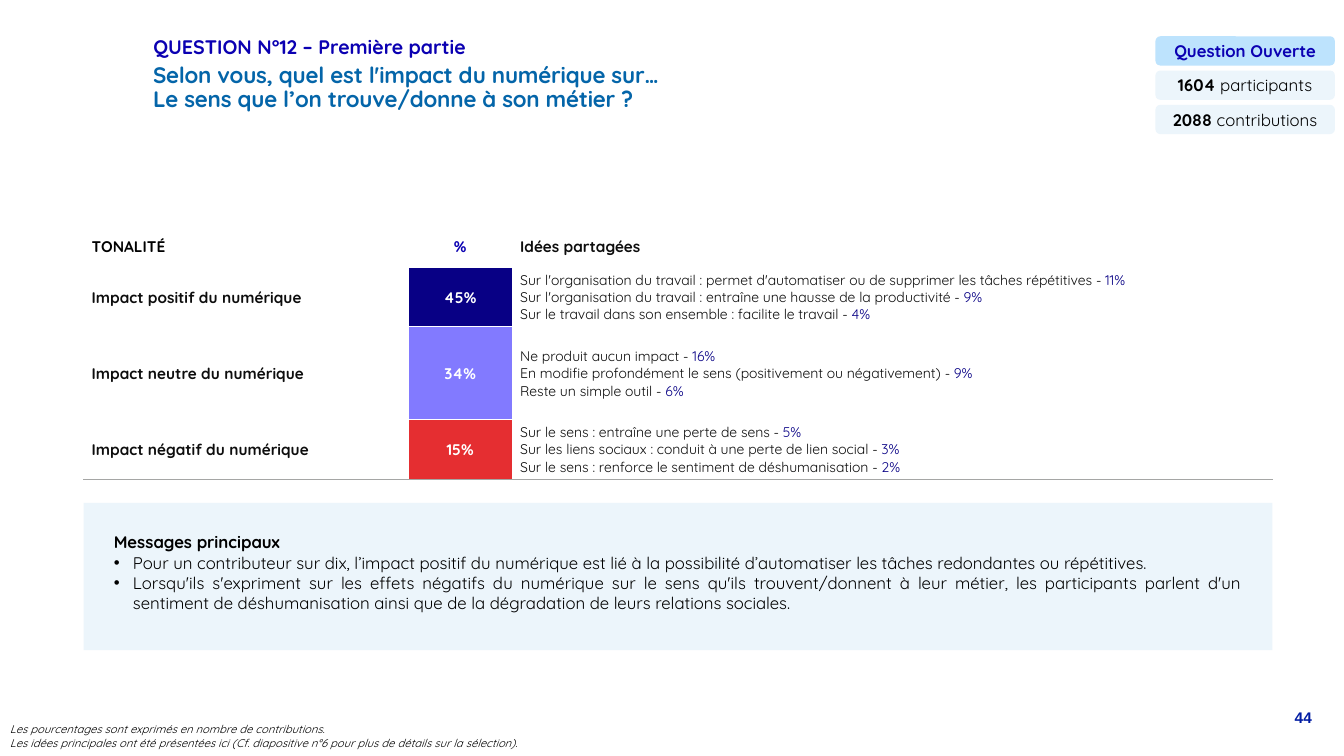
from dataclasses import dataclass

from lxml import etree
from pptx import Presentation
from pptx import util as u
from pptx.dml.color import RGBColor
from pptx.enum import shapes, text
from pptx.oxml import ns

# Content
QUESTION = "QUESTION N°12 – Première partie"
SUBJECT = ["Selon vous, quel est l'impact du numérique sur…",
           "Le sens que l’on trouve/donne à son métier ?"]
BADGES = [("Question Ouverte", ""), ("1604 ", "participants"),
          ("2088 ", "contributions")]
HEADINGS = ["TONALITÉ", "%", "Idées partagées"]
TONES = [
    ("Impact positif du numérique", "45%", "080085", [
        ("Sur l'organisation du travail : permet d'automatiser ou de supprimer "
         "les tâches répétitives", "11%"),
        ("Sur l'organisation du travail : entraîne une hausse de la productivité", "9%"),
        ("Sur le travail dans son ensemble : facilite le travail", "4%")]),
    ("Impact neutre du numérique", "34%", "827AFF", [
        ("Ne produit aucun impact", "16%"),
        ("En modifie profondément le sens (positivement ou négativement)", "9%"),
        ("Reste un simple outil", "6%")]),
    ("Impact négatif du numérique", "15%", "E52E31", [
        ("Sur le sens : entraîne une perte de sens", "5%"),
        ("Sur les liens sociaux : conduit à une perte de lien social", "3%"),
        ("Sur le sens : renforce le sentiment de déshumanisation", "2%")]),
]
MESSAGES_HEADING = "Messages principaux"
MESSAGES = [
    "Pour un contributeur sur dix, l’impact positif du numérique est lié à la "
    "possibilité d’automatiser les tâches redondantes ou répétitives.",
    "Lorsqu'ils s'expriment sur les effets négatifs du numérique sur le sens qu'ils "
    "trouvent/donnent à leur métier, les participants parlent d'un sentiment de "
    "déshumanisation ainsi que de la dégradation de leurs relations sociales.",
]
NOTES = ["Les pourcentages sont exprimés en nombre de contributions.",
         "Les idées principales ont été présentées ici (Cf. diapositive n°6 pour plus "
         "de détails sur la sélection)."]
PAGE = "44"


@dataclass(frozen=True)
class Theme:
    font: str = "Quicksand"
    page_font: str = "Arial"
    black: str = "000000"
    ink: str = "0D0D0D"
    white: str = "FFFFFF"
    accent: str = "0B00B2"
    share: str = "080085"
    subject: str = "0465A9"
    page: str = "011CA3"
    pale: str = "ECF5FB"
    sky: str = "BDE3FD"
    rule: str = "A5A6A5"
    title_size: int = 14
    subject_size: int = 16
    body_size: int = 12
    table_size: int = 11
    idea_size: int = 10
    note_size: int = 8


T = Theme()
ALIGN = text.PP_ALIGN
MIDDLE = text.MSO_ANCHOR.MIDDLE


def box(left, top, width, height):
    return [u.Inches(value) for value in (left, top, width, height)]


def style(run, size, color, bold=False, italic=False, font=T.font):
    run.font.name, run.font.size = font, u.Pt(size)
    run.font.bold, run.font.italic = bold, italic
    run.font.color.rgb = RGBColor.from_string(color)


def write(paragraph, words, size, color, align=ALIGN.LEFT, **look):
    paragraph.text = words
    paragraph.alignment = align
    style(paragraph.runs[0], size, color, **look)


def add_words(paragraph, words, size, color, **look):
    run = paragraph.add_run()
    run.text = words
    style(run, size, color, **look)


def paragraphs(frame, count):
    return [frame.paragraphs[0]] + [frame.add_paragraph() for _ in range(count - 1)]


def add_text(slide, *place):
    frame = slide.shapes.add_textbox(*box(*place)).text_frame
    frame.word_wrap = True
    return frame


def add_panel(slide, kind, color, *place):
    panel = slide.shapes.add_shape(kind, *box(*place))
    panel.shadow.inherit = False
    panel.fill.solid()
    panel.fill.fore_color.rgb = RGBColor.from_string(color)
    panel.line.fill.background()
    return panel


def add_bullet(paragraph, indent):
    props = paragraph._p.get_or_add_pPr()
    props.set("marL", str(u.Inches(indent)))
    props.set("indent", str(-u.Inches(indent)))
    etree.SubElement(props, ns.qn("a:buFont"), typeface=T.page_font)
    etree.SubElement(props, ns.qn("a:buChar"), char="•")


def format_cell(cell, sides, color=None):
    cell.vertical_anchor = MIDDLE
    cell.margin_left = cell.margin_right = u.Inches(0.08)
    cell.margin_top, cell.margin_bottom = u.Inches(0.01), 0
    props = cell._tc.get_or_add_tcPr()
    for side in sides:
        line = etree.SubElement(props, ns.qn(f"a:ln{side}"), w=str(u.Pt(0.25)))
        fill = etree.SubElement(line, ns.qn("a:solidFill"))
        etree.SubElement(fill, ns.qn("a:srgbClr"), val=T.rule)
    if color:
        cell.fill.solid()
        cell.fill.fore_color.rgb = RGBColor.from_string(color)
    else:
        cell.fill.background()


def add_heading(slide):
    title = slide.shapes.title
    title.left, title.top, title.width, title.height = box(1.42, 0.34, 9.9, 0.27)
    title.text_frame.vertical_anchor = MIDDLE
    question = title.text_frame.paragraphs[0]
    write(question, QUESTION, T.title_size, T.accent, bold=True)
    question.line_spacing = 0.9

    subject = add_text(slide, 1.42, 0.68, 9.9, 0.4)
    subject.vertical_anchor = MIDDLE
    for line, words in zip(paragraphs(subject, len(SUBJECT)), SUBJECT):
        write(line, words, T.subject_size, T.subject, bold=True)
        line.line_spacing = 0.9
        line.runs[0]._r.get_or_add_rPr().set("spc", "-10")


def add_badges(slide):
    for i, (strong, light) in enumerate(BADGES):
        badge = add_panel(slide, shapes.MSO_SHAPE.ROUNDED_RECTANGLE,
                          T.pale if light else T.sky, 11.46, 0.36 + 0.34 * i, 1.78, 0.29)
        badge.text_frame.vertical_anchor = MIDDLE
        label = badge.text_frame.paragraphs[0]
        write(label, strong, T.body_size, T.black if light else T.accent,
              ALIGN.CENTER, bold=True)
        if light:
            add_words(label, light, T.body_size, T.black)


def add_tones(slide):
    widths, heights = [3.22, 1.03, 7.54], [0.42, 0.59, 0.92, 0.59]
    tones = slide.shapes.add_table(len(heights), len(widths),
                                   *box(0.83, 2.23, sum(widths), sum(heights))).table
    tones.first_row = tones.horz_banding = False
    for column, width in zip(tones.columns, widths):
        column.width = u.Inches(width)
    for row, height in zip(tones.rows, heights):
        row.height = u.Inches(height)

    fills = [None] + [tone[2] for tone in TONES]
    for r, fill in enumerate(fills):
        for c in range(len(widths)):
            format_cell(tones.cell(r, c), "RB" if c < 2 else "B", fill if c == 1 else None)

    looks = [(T.black, ALIGN.LEFT), (T.accent, ALIGN.CENTER), (T.ink, ALIGN.LEFT)]
    for c, (words, (color, align)) in enumerate(zip(HEADINGS, looks)):
        write(tones.cell(0, c).text_frame.paragraphs[0], words, T.table_size, color,
              align, bold=True)
    for r, (tone, share, _, ideas) in enumerate(TONES, start=1):
        write(tones.cell(r, 0).text_frame.paragraphs[0], tone, T.table_size, T.ink, bold=True)
        write(tones.cell(r, 1).text_frame.paragraphs[0], share, T.table_size, T.white,
              ALIGN.CENTER, bold=True)
        lines = paragraphs(tones.cell(r, 2).text_frame, len(ideas))
        for line, (idea, part) in zip(lines, ideas):
            write(line, f"{idea} - ", T.idea_size, T.ink)
            add_words(line, part, T.idea_size, T.share)


def add_messages(slide):
    add_panel(slide, shapes.MSO_SHAPE.RECTANGLE, T.pale, 0.83, 4.99, 11.79, 1.46)
    heading, *lines = paragraphs(add_text(slide, 1.03, 5.23, 11.39, 0.91), len(MESSAGES) + 1)
    write(heading, MESSAGES_HEADING, T.body_size, T.black, ALIGN.JUSTIFY, bold=True)
    for line, message in zip(lines, MESSAGES):
        add_bullet(line, 0.19)
        write(line, message, T.body_size, T.black, ALIGN.JUSTIFY)


def add_footer(slide):
    notes = add_text(slide, 0, 7.12, 7.37, 0.37)
    for line, note in zip(paragraphs(notes, len(NOTES)), NOTES):
        write(line, note, T.note_size, T.black, ALIGN.JUSTIFY, italic=True)
    page = add_text(slide, 11.14, 6.98, 1.97, 0.52)
    write(page.paragraphs[0], PAGE, T.table_size, T.page, ALIGN.RIGHT,
          bold=True, font=T.page_font)


def main():
    deck = Presentation()
    deck.slide_width, deck.slide_height = u.Inches(13.33), u.Inches(7.5)
    slide = deck.slides.add_slide(deck.slide_layouts[5])
    for part in (add_heading, add_badges, add_tones, add_messages, add_footer):
        part(slide)
    deck.save("out.pptx")


if __name__ == "__main__":
    main()
